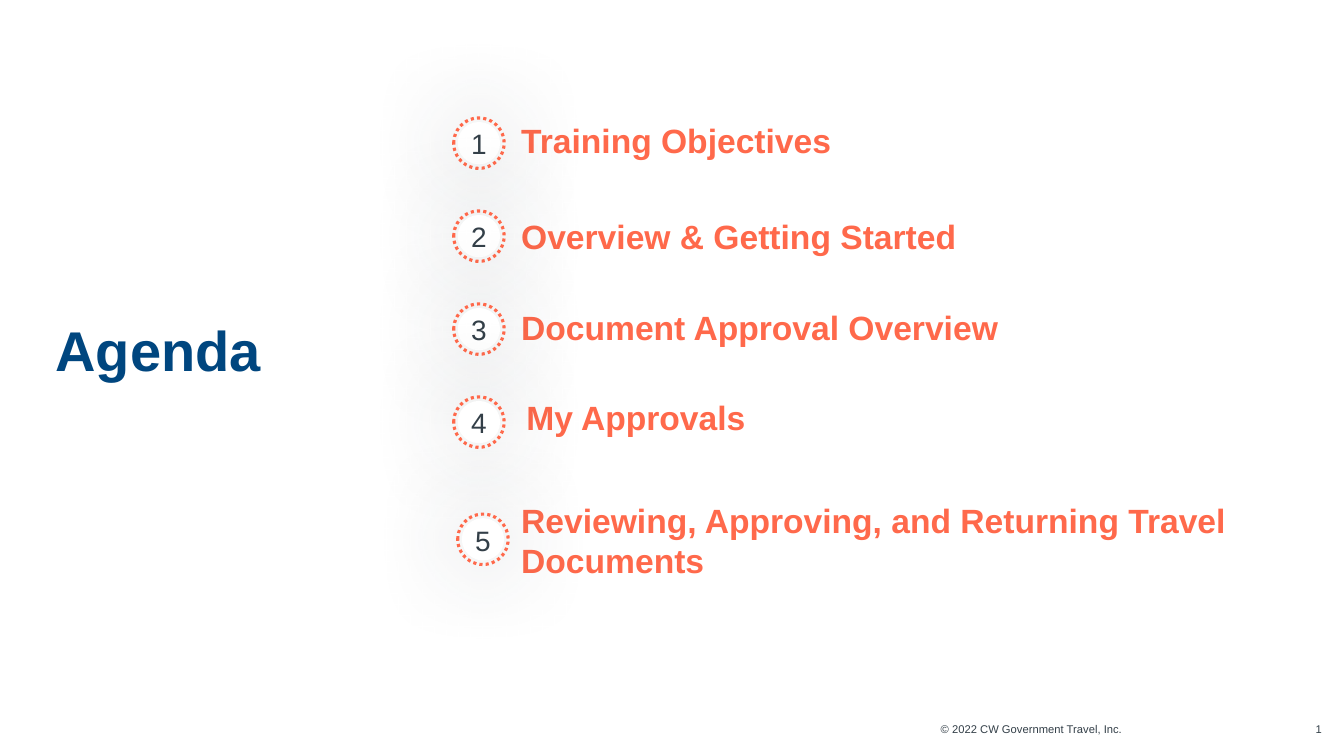
import pptx
import pptx.util
import pptx.dml.color
import pptx.enum.dml
import pptx.enum.shapes
import pptx.enum.text
import pptx.oxml
import pptx.oxml.ns

Pt = pptx.util.Pt
RGB = pptx.dml.color.RGBColor.from_string
Align = pptx.enum.text.PP_ALIGN
Anchor = pptx.enum.text.MSO_ANCHOR
Fit = pptx.enum.text.MSO_AUTO_SIZE
OVAL = pptx.enum.shapes.MSO_SHAPE.OVAL

theme = {
    "font": "Arial", "navy": "00467F", "coral": "FF694B",
    "slate": "333F48", "white": "FFFFFF",
    "title": 40, "item": 24, "badge": 20, "small": 8,
}

deck = pptx.Presentation()
deck.slide_width = pptx.util.Inches(13.33)
deck.slide_height = pptx.util.Inches(7.5)
slide = deck.slides.add_slide(deck.slide_layouts[5])


def place(x, y, w, h):
    wide, high = deck.slide_width / 100, deck.slide_height / 100
    return [round(n) for n in (x * wide, y * high, w * wide, h * high)]


def write(shape, text, size, color, bold=False, align=Align.LEFT, pad=0):
    frame = shape.text_frame
    frame.text = text
    frame.word_wrap = True
    frame.margin_left = frame.margin_right = Pt(pad)
    frame.margin_top = frame.margin_bottom = Pt(pad / 2)
    para = frame.paragraphs[0]
    para.alignment = align
    font = para.runs[0].font
    font.name, font.size, font.bold = theme["font"], Pt(theme[size]), bold
    font.color.rgb = RGB(theme[color])
    return frame


title = slide.shapes.title
title.left, title.top, title.width, title.height = place(4.13, 9.47, 26.26, 73.33)
frame = write(title, "Agenda", "title", "navy", True)
frame.vertical_anchor = Anchor.MIDDLE
frame.auto_size = Fit.NONE

items = [
    ("Training Objectives", 38.78, 17.47, 33.08, 3.6, 0.65),
    ("Overview & Getting Started", 38.78, 28.53, 47.19, 5.33, 1),
    ("Document Approval Overview", 38.78, 42.27, 48.46, 3.47, 0.65),
    ("My Approvals", 39.16, 54.13, 59.19, 3.6, 0.65),
    ("Reviewing, Approving, and Returning Travel Documents",
     38.78, 66, 52.81, 10.8, 1),
]
for text, x, y, w, h, space in items:
    box = slide.shapes.add_textbox(*place(x, y, w, h))
    frame = write(box, text, "item", "coral", True)
    frame.vertical_anchor = Anchor.MIDDLE
    frame.auto_size = Fit.SHAPE_TO_FIT_TEXT
    frame.paragraphs[0].line_spacing = space

spots = [(33.76, 15.6 + 12.3 * row) for row in range(4)] + [(34.06, 68)]
glow = (
    f'<a:effectLst {pptx.oxml.ns.nsdecls("a")}>'
    f'<a:outerShdw blurRad="{Pt(70)}" dist="0" dir="0" algn="ctr" rotWithShape="0">'
    f'<a:srgbClr val="{theme["slate"]}"><a:alpha val="40000"/></a:srgbClr>'
    '</a:outerShdw></a:effectLst>'
)
for count, (x, y) in enumerate(spots, 1):
    badge = slide.shapes.add_group_shape().shapes
    disc = badge.add_shape(OVAL, *place(x + 0.3, y + 0.53, 3.15, 5.6))
    disc.fill.solid()
    disc.fill.fore_color.rgb = RGB(theme["white"])
    disc.line.fill.background()
    disc.element.spPr.append(pptx.oxml.parse_xml(glow))

    ring = badge.add_shape(OVAL, *place(x, y, 3.75, 6.67))
    ring.shadow.inherit = False
    ring.fill.background()
    ring.line.color.rgb = RGB(theme["coral"])
    ring.line.width = Pt(2.25)
    ring.line.dash_style = pptx.enum.dml.MSO_LINE.ROUND_DOT

    label = badge.add_textbox(*place(x + 0.53, y + 0.53, 2.7, 5.87))
    frame = write(label, str(count), "badge", "slate", align=Align.CENTER, pad=7.2)
    frame.word_wrap = False
    frame.auto_size = Fit.SHAPE_TO_FIT_TEXT

notes = [
    ("© 2022 CW Government Travel, Inc.", 62.87, 20.63),
    ("1", 96.62, 1.73),
]
for text, x, w in notes:
    box = slide.shapes.add_textbox(*place(x, 95.6, w, 1.87))
    write(box, text, "small", "slate", align=Align.RIGHT)

deck.save("out.pptx")
